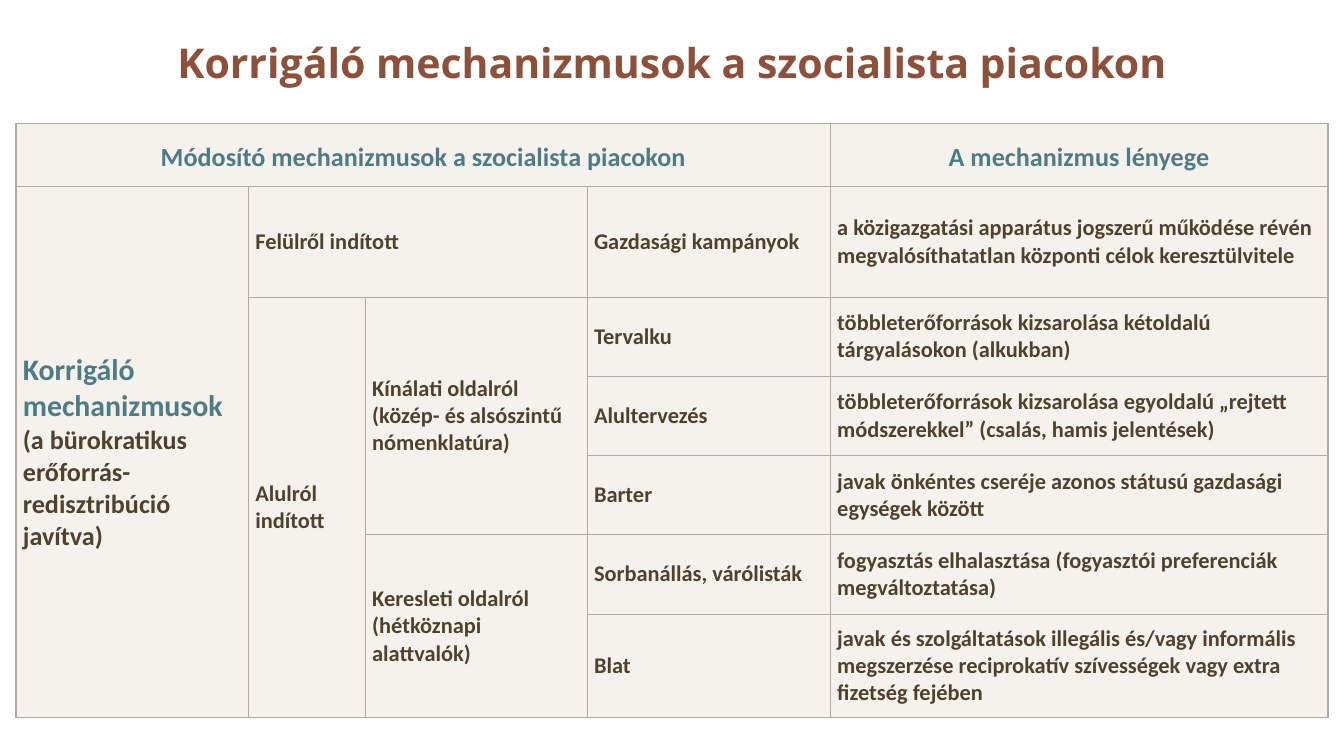
from copy import deepcopy

from lxml import etree
from pptx import Presentation
from pptx.dml.color import RGBColor
from pptx.enum.text import MSO_ANCHOR, PP_ALIGN
from pptx.oxml.ns import qn
from pptx.util import Inches, Pt

CENTER, LEFT = PP_ALIGN.CENTER, PP_ALIGN.LEFT
MIDDLE = MSO_ANCHOR.MIDDLE

THEME = {
    "title_font": "Open Sans", "body_font": "Calibri",
    "title": "8D503B", "accent": "4D7C85", "body": "50412B",
    "cell": "EFEAE4", "cell_alpha": 60, "border": "B3A99D",
    "title_size": 22, "lead_size": 16, "head_size": 14, "body_size": 12,
    "outer_line": 1, "inner_line": 0.5,
}

SLIDE_WIDTH = Inches(10)
SLIDE_HEIGHT = SLIDE_WIDTH * 9 // 16

TITLE = "Korrigáló mechanizmusok a szocialista piacokon"
COLUMN_WIDTHS = [1.73, 0.87, 1.65, 1.81, 3.7]
ROW_HEIGHTS = [0.47, 0.82, 0.59, 0.59, 0.59, 0.59, 0.77]
MARGIN, TABLE_TOP, CELL_INSET = 0.12, 0.92, 0.05

HEADINGS = [
    (0, 0, 1, 4, "Módosító mechanizmusok a szocialista piacokon"),
    (0, 4, 1, 1, "A mechanizmus lényege"),
]
LEAD = ["Korrigáló mechanizmusok", "(a bürokratikus erőforrás-redisztribúció javítva)"]
GROUPS = [
    (1, 1, 1, 2, ["Felülről indított"]),
    (2, 1, 5, 1, ["Alulról indított"]),
    (2, 2, 3, 1, ["Kínálati oldalról\n(közép- és alsószintű nómenklatúra)"]),
    (5, 2, 2, 1, ["Keresleti oldalról", "(hétköznapi alattvalók)"]),
]
MECHANISMS = [
    ("Gazdasági kampányok",
     "a közigazgatási apparátus jogszerű működése révén megvalósíthatatlan központi célok keresztülvitele"),
    ("Tervalku", "többleterőforrások kizsarolása kétoldalú tárgyalásokon (alkukban)"),
    ("Alultervezés",
     "többleterőforrások kizsarolása egyoldalú „rejtett módszerekkel” (csalás, hamis jelentések)"),
    ("Barter", "javak önkéntes cseréje azonos státusú gazdasági egységek között"),
    ("Sorbanállás, várólisták", "fogyasztás elhalasztása (fogyasztói preferenciák megváltoztatása)"),
    ("Blat",
     "javak és szolgáltatások illegális és/vagy informális megszerzése "
     "reciprokatív szívességek vagy extra fizetség fejében"),
]


def write(paragraph, text, size=THEME["body_size"], color=THEME["body"],
          font=THEME["body_font"], align=LEFT, spacing=1.0):
    paragraph.text = text
    paragraph.alignment = align
    paragraph.line_spacing = spacing
    for run in paragraph.runs:
        run.font.name = font
        run.font.size = Pt(size)
        run.font.bold = True
        run.font.color.rgb = RGBColor.from_string(color)
    for line_break in paragraph._p.findall(qn("a:br")):
        line_break.append(deepcopy(paragraph.runs[0]._r.rPr))


def draw_borders(cell, row, column, rows, columns):
    outer = {
        "a:lnL": column == 0,
        "a:lnR": column + columns == len(COLUMN_WIDTHS),
        "a:lnT": row == 0,
        "a:lnB": row + rows == len(ROW_HEIGHTS),
    }
    properties = cell._tc.get_or_add_tcPr()
    for position, (tag, is_outer) in enumerate(outer.items()):
        width = THEME["outer_line"] if is_outer else THEME["inner_line"]
        border = etree.Element(qn(tag), w=str(Pt(width)))
        paint = etree.SubElement(border, qn("a:solidFill"))
        etree.SubElement(paint, qn("a:srgbClr"), val=THEME["border"])
        properties.insert(position, border)


def fill_cell(cell):
    cell.fill.solid()
    cell.fill.fore_color.rgb = RGBColor.from_string(THEME["cell"])
    tint = cell._tc.tcPr.find(qn("a:solidFill")).find(qn("a:srgbClr"))
    etree.SubElement(tint, qn("a:alpha"), val=str(THEME["cell_alpha"] * 1000))


def place(table, row, column, rows, columns, lines):
    cell = table.cell(row, column)
    if rows * columns > 1:
        cell.merge(table.cell(row + rows - 1, column + columns - 1))
    cell.vertical_anchor = MIDDLE
    cell.margin_left = cell.margin_right = Inches(CELL_INSET)
    cell.margin_top = cell.margin_bottom = Inches(CELL_INSET)
    draw_borders(cell, row, column, rows, columns)
    frame = cell.text_frame
    for index, (text, style) in enumerate(lines):
        paragraph = frame.add_paragraph() if index else frame.paragraphs[0]
        write(paragraph, text, **style)


def add_title(slide):
    box = slide.shapes.add_textbox(Inches(MARGIN), 0, Inches(sum(COLUMN_WIDTHS)), Inches(1))
    frame = box.text_frame
    frame.word_wrap = True
    frame.vertical_anchor = MIDDLE
    write(frame.paragraphs[0], TITLE, size=THEME["title_size"], color=THEME["title"],
          font=THEME["title_font"], align=CENTER, spacing=0.75)


def add_mechanism_table(slide):
    table = slide.shapes.add_table(
        len(ROW_HEIGHTS), len(COLUMN_WIDTHS), Inches(MARGIN), Inches(TABLE_TOP),
        Inches(sum(COLUMN_WIDTHS)), Inches(sum(ROW_HEIGHTS))).table
    table.first_row = table.horz_banding = False
    for column, width in zip(table.columns, COLUMN_WIDTHS):
        column.width = Inches(width)
    for row, height in zip(table.rows, ROW_HEIGHTS):
        row.height = Inches(height)

    heading = {"size": THEME["head_size"], "color": THEME["accent"],
               "align": CENTER, "spacing": 1.15}
    lead_styles = [{"size": THEME["lead_size"], "color": THEME["accent"]},
                   {"size": THEME["head_size"]}]
    for *area, text in HEADINGS:
        place(table, *area, [(text, heading)])
    place(table, 1, 0, len(MECHANISMS), 1, zip(LEAD, lead_styles))
    for *area, lines in GROUPS:
        place(table, *area, [(line, {}) for line in lines])
    for row, mechanism in enumerate(MECHANISMS, start=1):
        for column, text in enumerate(mechanism, start=3):
            place(table, row, column, 1, 1, [(text, {})])
    for cell in table.iter_cells():
        fill_cell(cell)


def main():
    deck = Presentation()
    deck.slide_width, deck.slide_height = SLIDE_WIDTH, SLIDE_HEIGHT
    slide = deck.slides.add_slide(deck.slide_layouts[6])
    add_title(slide)
    add_mechanism_table(slide)
    deck.save("out.pptx")


if __name__ == "__main__":
    main()
